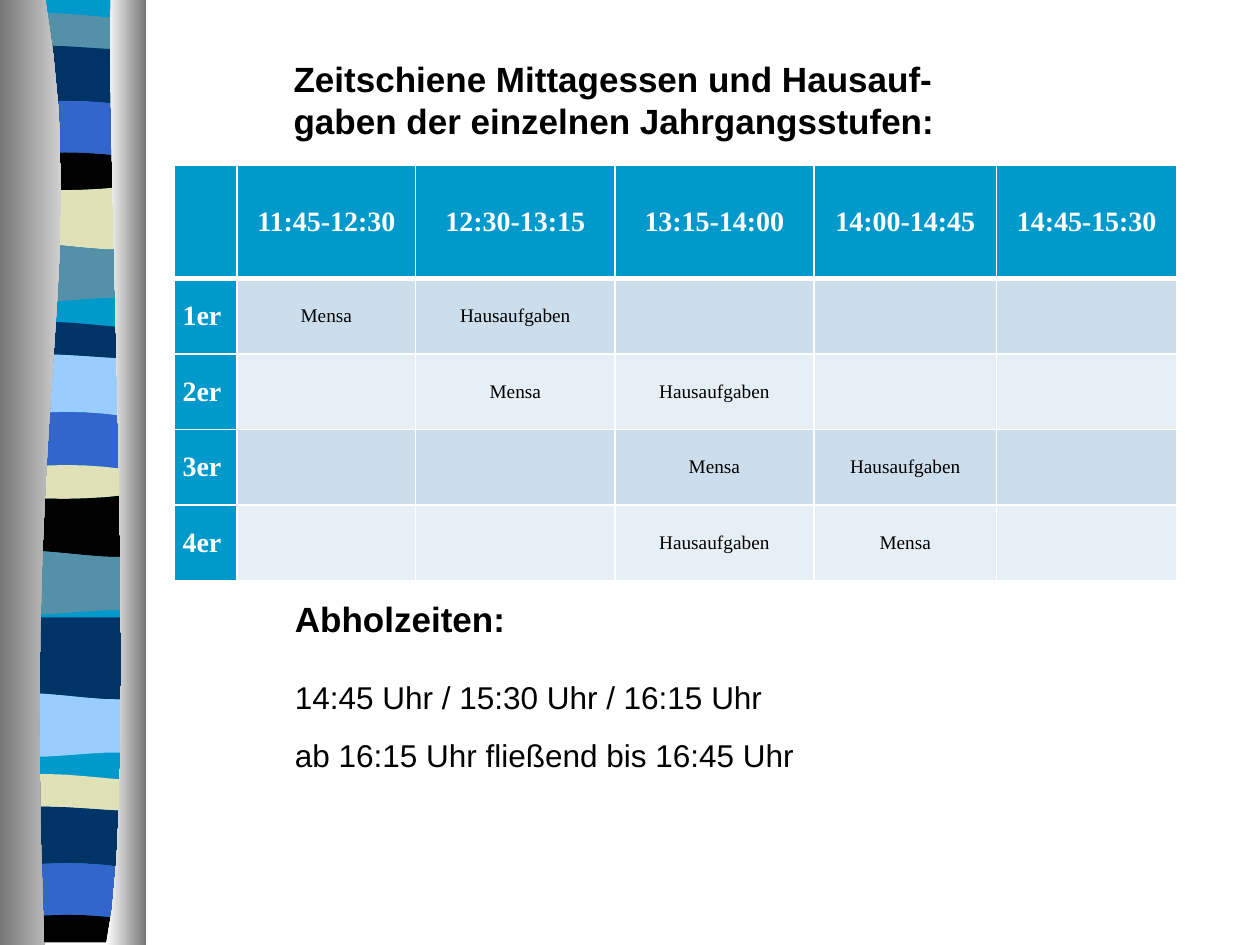
"""Build the slide with the lunch and homework timetable beside a striped column."""
from lxml.etree import SubElement
from pptx import Presentation
from pptx.dml.color import RGBColor
from pptx.enum.text import MSO_ANCHOR, PP_ALIGN
from pptx.oxml.ns import qn
from pptx.util import Inches, Pt

WHITE = RGBColor(0xFF, 0xFF, 0xFF)
BLACK = RGBColor(0, 0, 0)
GREY = RGBColor(0x76, 0x76, 0x76)
SILVER = RGBColor(0xD0, 0xD0, 0xD0)
CYAN = RGBColor(0x00, 0x99, 0xCC)
TEAL = RGBColor(0x54, 0x90, 0xA8)
NAVY = RGBColor(0x00, 0x33, 0x66)
BLUE = RGBColor(0x33, 0x66, 0xCC)
SKY = RGBColor(0x99, 0xCC, 0xFF)
SAND = RGBColor(0xE1, 0xE1, 0xB7)
ROW_FILLS = [RGBColor(0xCC, 0xDE, 0xEC), RGBColor(0xE7, 0xEF, 0xF6)]

FLAT, CREST, RISE = (0, 0, 0, 0), (0, -0.05, 0.02, 0.04), (0, -0.05, 0.02, 0.02)
HUMP, SAG = (0, -0.06, -0.05, 0.02), (0, 0.03, 0.03, -0.03)
SWELL, DIP = (0, -0.04, 0.08, 0.03), (0, 0.06, -0.06, 0)

EDGES = [
    (TEAL, 0.12, CREST), (NAVY, 0.38, RISE), (BLUE, 0.84, HUMP),
    (BLACK, 1.25, HUMP), (SAND, 1.49, SAG), (TEAL, 1.94, SWELL), (None, 2.38, DIP),
    (NAVY, 2.57, CREST), (SKY, 2.83, RISE), (BLUE, 3.31, HUMP), (SAND, 3.73, HUMP),
    (BLACK, 3.94, SAG), (TEAL, 4.38, SWELL), (None, 4.86, DIP), (NAVY, 4.9, FLAT),
    (SKY, 5.51, SWELL), (None, 5.99, DIP), (SAND, 6.16, CREST), (NAVY, 6.42, RISE),
    (BLUE, 6.89, HUMP), (BLACK, 7.3, HUMP), (None, 7.48, FLAT),
]


def curve(p0, p1, p2, p3, steps=7):
    pts = []
    for i in range(steps + 1):
        t = i / steps
        w = ((1 - t) ** 3, 3 * t * (1 - t) ** 2, 3 * t * t * (1 - t), t ** 3)
        pts.append(tuple(sum(k * p[a] for k, p in zip(w, (p0, p1, p2, p3))) for a in (0, 1)))
    return pts


def outline(shapes, pts):
    pts = [(Inches(x), Inches(y)) for x, y in pts]
    fb = shapes.build_freeform(*pts[0])
    fb.add_line_segments(pts[1:], close=True)
    s = fb.convert_to_shape()
    s.shadow.inherit = False
    s.line.fill.background()
    return s


prs = Presentation()
prs.slide_width, prs.slide_height = Inches(10), Inches(7.5)
slide = prs.slides.add_slide(prs.slide_layouts[1])
slide.background.fill.solid()
slide.background.fill.fore_color.rgb = WHITE

XS = (0.05, 0.41, 0.78, 1.14)
bands = [(CYAN, [(XS[0], 0), (XS[-1], 0), (XS[-1], 7.48), (XS[0], 7.48)])]
edges = [curve(*((x, y + d) for x, d in zip(XS, wave))) for _, y, wave in EDGES]
for (color, _, _), top, bottom in zip(EDGES, edges, edges[1:]):
    if color is not None:
        bands.append((color, top + bottom[::-1]))
for color, pts in bands:
    s = outline(slide.shapes, pts)
    s.fill.solid()
    s.fill.fore_color.rgb = color

PILLARS = [
    (0, curve((0.36, 0), (0.72, 2.16), (0.17, 2.96), (0.35, 7.5), 14), (GREY, SILVER)),
    (1.16, curve((0.88, 0), (0.84, 1.25), (1.11, 6.46), (0.84, 7.5), 14), (WHITE, GREY)),
]
for x, side, colors in PILLARS:
    s = outline(slide.shapes, side + [(x, 7.5), (x, 0)])
    s.fill.gradient()
    s.fill.gradient_angle = 0
    for stop, color in zip(s.fill.gradient_stops, colors):
        stop.color.rgb = color

ROWS = [
    ["", "11:45-12:30", "12:30-13:15", "13:15-14:00", "14:00-14:45", "14:45-15:30"],
    ["1er", "Mensa", "Hausaufgaben", "", "", ""],
    ["2er", "", "Mensa", "Hausaufgaben", "", ""],
    ["3er", "", "", "Mensa", "Hausaufgaben", ""],
    ["4er", "", "", "Hausaufgaben", "Mensa", ""],
]
COLS = [0.5, 1.42, 1.58, 1.58, 1.45, 1.43]
HEIGHTS = [0.9, 0.6, 0.6, 0.6, 0.6]
table = slide.shapes.add_table(len(ROWS), len(COLS), Inches(1.38), Inches(1.31),
                               Inches(sum(COLS)), Inches(sum(HEIGHTS))).table
table.horz_banding = False
for col, w in zip(table.columns, COLS):
    col.width = Inches(w)
for r_i, texts in enumerate(ROWS):
    table.rows[r_i].height = Inches(HEIGHTS[r_i])
    for c_i, text in enumerate(texts):
        cell = table.cell(r_i, c_i)
        head = r_i == 0 or c_i == 0
        cell.margin_left = cell.margin_right = Inches(0.07)
        cell.margin_top = cell.margin_bottom = 0
        cell.vertical_anchor = MSO_ANCHOR.MIDDLE
        for side in ("L", "R", "T", "B"):
            thick = (r_i, side) in ((0, "B"), (1, "T"))
            ln = SubElement(cell._tc.get_or_add_tcPr(), qn(f"a:ln{side}"), w=str(Pt(3 if thick else 1)))
            SubElement(SubElement(ln, qn("a:solidFill")), qn("a:srgbClr"), val=str(WHITE))
        cell.fill.solid()
        cell.fill.fore_color.rgb = CYAN if head else ROW_FILLS[(r_i - 1) % 2]
        if text:
            p = cell.text_frame.paragraphs[0]
            p.alignment = PP_ALIGN.JUSTIFY if c_i == 0 else PP_ALIGN.CENTER
            r = p.add_run()
            r.text = text
            r.font.name, r.font.size, r.font.bold = "Times New Roman", Pt(16 if head else 11), head
            r.font.color.rgb = WHITE if head else BLACK

TEXTS = [
    (slide.shapes.title, (2.23, 0.41, 5.59, 0.77),
     [("Zeitschiene Mittagessen und Hausauf-gaben der einzelnen Jahrgangsstufen:", 20, True, 0)]),
    (slide.placeholders[1], (2.24, 4.69, 6.46, 1.51),
     [("Abholzeiten:", 20, True, 0),
      ("14:45 Uhr / 15:30 Uhr / 16:15 Uhr", 18, False, 22.4),
      ("ab 16:15 Uhr fließend bis 16:45 Uhr", 18, False, 11.5)]),
]
for sp, box, lines in TEXTS:
    sp.left, sp.top, sp.width, sp.height = (Inches(v) for v in box)
    tf = sp.text_frame
    tf.word_wrap = True
    tf.vertical_anchor = MSO_ANCHOR.TOP
    for i, (text, size, bold, gap) in enumerate(lines):
        p = tf.add_paragraph() if i else tf.paragraphs[0]
        p.alignment = PP_ALIGN.LEFT
        p.space_before = Pt(gap)
        pPr = p._p.get_or_add_pPr()
        pPr.set("marL", "0")
        pPr.set("indent", "0")
        SubElement(pPr, qn("a:buNone"))
        r = p.add_run()
        r.text = text
        r.font.name, r.font.size, r.font.bold = "Arial", Pt(size), bold
        r.font.color.rgb = BLACK

prs.save("out.pptx")
